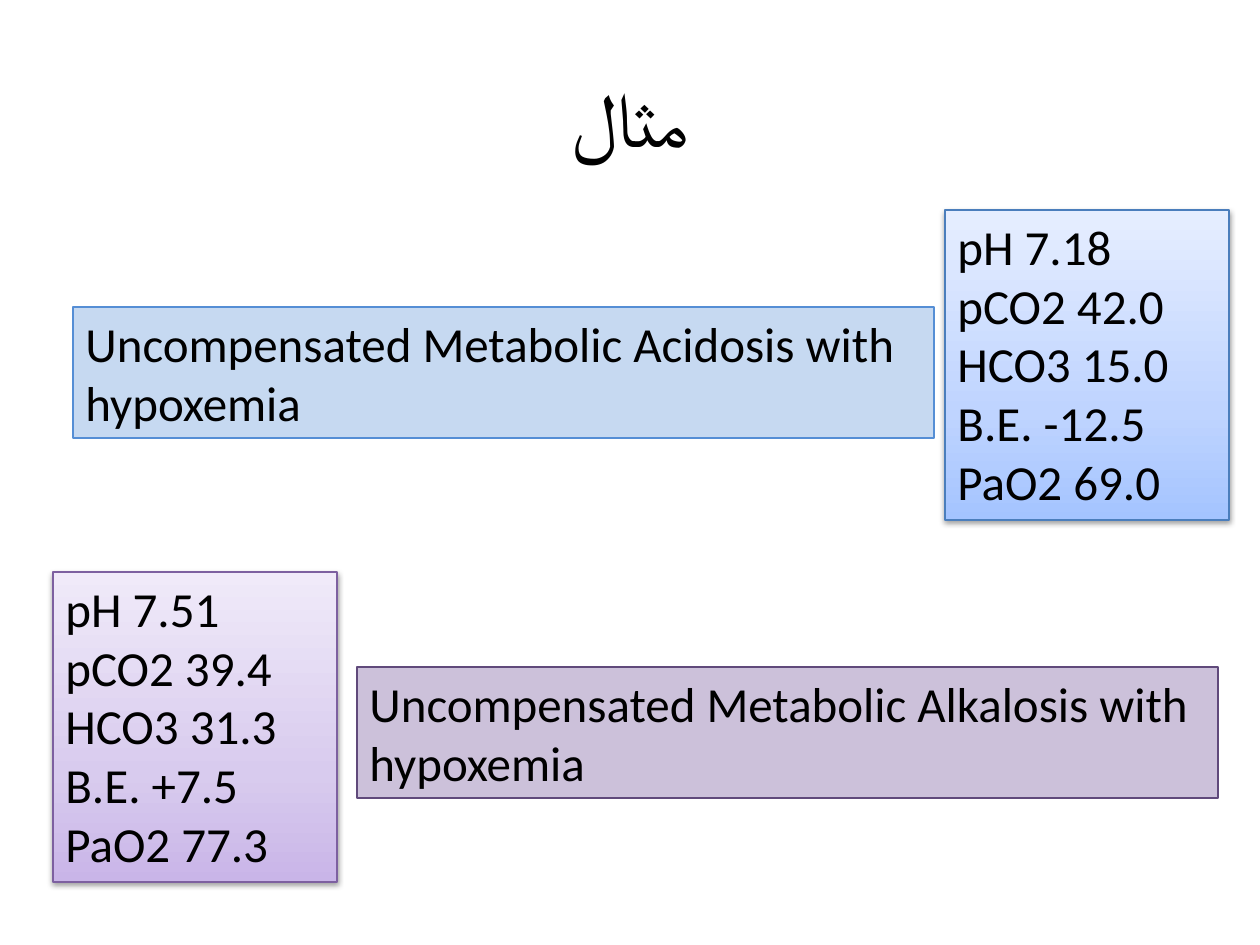
from copy import deepcopy
from dataclasses import dataclass

from lxml.etree import SubElement
from pptx import Presentation
from pptx.dml.color import RGBColor
from pptx.enum.shapes import MSO_SHAPE
from pptx.enum.text import MSO_ANCHOR, MSO_AUTO_SIZE, PP_ALIGN
from pptx.oxml.ns import qn
from pptx.util import Emu, Pt

PX = 914400 / 126

BLACK = RGBColor(0x00, 0x00, 0x00)
BLUE_STOPS = (
    (0, RGBColor(0xA4, 0xC4, 0xFF)),
    (0.35, RGBColor(0xBF, 0xD4, 0xFF)),
    (1, RGBColor(0xE6, 0xEE, 0xFF)),
)
BLUE_EDGE = RGBColor(0x4B, 0x7E, 0xBC)
PALE_BLUE = RGBColor(0xC6, 0xD9, 0xF1)
PALE_BLUE_EDGE = RGBColor(0x55, 0x8E, 0xD5)
PURPLE_STOPS = (
    (0, RGBColor(0xC9, 0xB5, 0xE8)),
    (0.35, RGBColor(0xD8, 0xCB, 0xEE)),
    (1, RGBColor(0xF0, 0xEA, 0xF9)),
)
PURPLE_EDGE = RGBColor(0x7D, 0x60, 0xA0)
PALE_PURPLE = RGBColor(0xCC, 0xC1, 0xDA)
PALE_PURPLE_EDGE = RGBColor(0x60, 0x4A, 0x7B)

TITLE_FONT = {"name": "Calibri", "size": Pt(44)}
BODY_FONT = {"name": "Calibri", "size": Pt(28)}
BODY_FRAME = {
    "word_wrap": True,
    "vertical_anchor": MSO_ANCHOR.TOP,
    "auto_size": MSO_AUTO_SIZE.SHAPE_TO_FIT_TEXT,
}
TITLE_FRAME = {"word_wrap": True, "vertical_anchor": MSO_ANCHOR.MIDDLE}
SHADOW = {"blurRad": "40000", "dist": "20000", "dir": "5400000", "rotWithShape": "0"}

RESULTS_SIZE = (284, 310)
DIAGNOSIS_SIZE = (861, 131)


@dataclass(frozen=True)
class Panel:
    left: int
    top: int
    size: tuple[int, int]
    lines: tuple[str, ...]
    fill: RGBColor | tuple[tuple[float, RGBColor], ...]
    edge: RGBColor


PANELS = (
    Panel(53, 572, RESULTS_SIZE,
          ("pH 7.51", "pCO2 39.4", "HCO3 31.3", "B.E. +7.5", "PaO2 77.3"),
          PURPLE_STOPS, PURPLE_EDGE),
    Panel(357, 667, DIAGNOSIS_SIZE,
          ("Uncompensated Metabolic Alkalosis with hypoxemia",),
          PALE_PURPLE, PALE_PURPLE_EDGE),
    Panel(945, 210, RESULTS_SIZE,
          ("pH 7.18", "pCO2 42.0", "HCO3 15.0", "B.E. -12.5", "PaO2 69.0"),
          BLUE_STOPS, BLUE_EDGE),
    Panel(73, 307, DIAGNOSIS_SIZE,
          ("Uncompensated Metabolic Acidosis with hypoxemia",),
          PALE_BLUE, PALE_BLUE_EDGE),
)


def px(length: int) -> Emu:
    return Emu(round(length * PX))


def apply(target, values: dict) -> None:
    for name, value in values.items():
        setattr(target, name, value)


def write_lines(frame, lines: tuple[str, ...], font: dict, frame_format: dict,
                alignment: PP_ALIGN) -> None:
    apply(frame, frame_format)
    for index, line in enumerate(lines):
        paragraph = frame.paragraphs[0] if index == 0 else frame.add_paragraph()
        paragraph.alignment = alignment
        run = paragraph.add_run()
        run.text = line
        apply(run.font, font)
        run.font.color.rgb = BLACK


def fill_gradient(shape, stops: tuple[tuple[float, RGBColor], ...]) -> None:
    """Fill from the bottom edge up, with as many stops as given."""
    shape.fill.gradient()
    shape.fill.gradient_angle = 90
    stop_list = shape._element.spPr.find(qn("a:gradFill")).find(qn("a:gsLst"))
    while len(stop_list) < len(stops):
        stop_list.append(deepcopy(stop_list[0]))
    for stop, (position, color) in zip(shape.fill.gradient_stops, stops):
        stop.position = position
        stop.color.rgb = color


def add_shadow(shape) -> None:
    effects = shape._element.spPr.find(qn("a:effectLst"))
    outer = SubElement(effects, qn("a:outerShdw"), SHADOW)
    color = SubElement(outer, qn("a:srgbClr"), {"val": str(BLACK)})
    SubElement(color, qn("a:alpha"), {"val": "38000"})


def add_panel(slide, panel: Panel) -> None:
    bounds = map(px, (panel.left, panel.top, *panel.size))
    shape = slide.shapes.add_shape(MSO_SHAPE.RECTANGLE, *bounds)
    shape.shadow.inherit = False
    if isinstance(panel.fill, RGBColor):
        shape.fill.solid()
        shape.fill.fore_color.rgb = panel.fill
    else:
        fill_gradient(shape, panel.fill)
        add_shadow(shape)
    shape.line.color.rgb = panel.edge
    shape.line.width = Pt(0.75)
    write_lines(shape.text_frame, panel.lines, BODY_FONT, BODY_FRAME, PP_ALIGN.LEFT)


def main() -> None:
    deck = Presentation()
    deck.slide_width, deck.slide_height = px(1260), px(945)
    slide = deck.slides.add_slide(deck.slide_layouts[6])
    title = slide.shapes.add_textbox(*map(px, (63, 38, 1134, 158)))
    write_lines(title.text_frame, ("مثال",), TITLE_FONT, TITLE_FRAME, PP_ALIGN.CENTER)
    for panel in PANELS:
        add_panel(slide, panel)
    deck.save("out.pptx")


if __name__ == "__main__":
    main()
